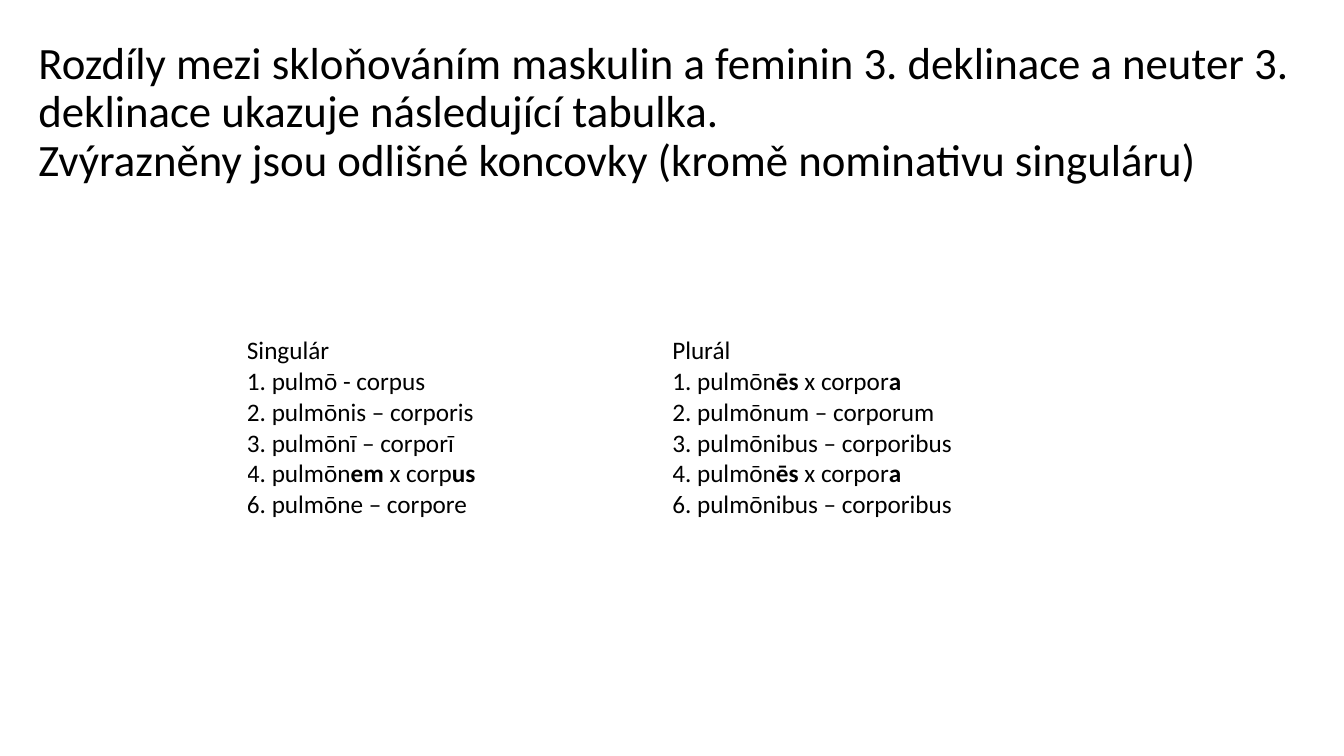
import pptx
import pptx.util
import pptx.dml.color
import pptx.enum.text

Pt = pptx.util.Pt
FONT = "Calibri"
COLORS = {"text": "000000", "background": "FFFFFF"}
TITLE = [
    "Rozdíly mezi skloňováním maskulin a feminin 3. deklinace a neuter 3. "
    "deklinace ukazuje následující tabulka.",
    "Zvýrazněny jsou odlišné koncovky (kromě nominativu singuláru)",
]
DECLENSION = {
    "Singulár": [
        ["1. pulmō - corpus"],
        ["2. pulmōnis – corporis"],
        ["3. pulmōnī – corporī"],
        ["4. pulmōn", "em", " x corp", "us"],
        ["6. pulmōne – corpore"],
    ],
    "Plurál": [
        ["1. pulmōn", "ēs", " x corpor", "a"],
        ["2. pulmōnum – corporum"],
        ["3. pulmōnibus – corporibus"],
        ["4. pulmōn", "ēs", " x corpor", "a"],
        ["6. pulmōnibus – corporibus"],
    ],
}


def color(name):
    return pptx.dml.color.RGBColor.from_string(COLORS[name])


def add_run(p, text, size, bold=False):
    r = p.add_run()
    r.text = text
    r.font.name = FONT
    r.font.size = Pt(size)
    r.font.bold = bold
    r.font.color.rgb = color("text")


def add_title(s, x, y, w, h):
    sp = s.shapes.title
    sp.left, sp.top, sp.width, sp.height = Pt(x), Pt(y), Pt(w), Pt(h)
    tf = sp.text_frame
    tf.word_wrap = True
    tf.auto_size = pptx.enum.text.MSO_AUTO_SIZE.NONE
    tf.vertical_anchor = pptx.enum.text.MSO_ANCHOR.MIDDLE
    p = tf.paragraphs[0]
    p.alignment = pptx.enum.text.PP_ALIGN.LEFT
    p.line_spacing = 0.9
    for i, line in enumerate(TITLE):
        if i:
            p.add_line_break()
        add_run(p, line, 32)


def fill_cell(cell, lines):
    cell.fill.background()
    cell.margin_left = cell.margin_right = cell.margin_top = cell.margin_bottom = 0
    tf = cell.text_frame
    for i, parts in enumerate(lines):
        p = tf.add_paragraph() if i else tf.paragraphs[0]
        for j, part in enumerate(parts):
            add_run(p, part, 18, bold=j % 2 == 1)


def add_declension_table(s, x, y, w, h):
    header_h = h / 7
    table = s.shapes.add_table(2, len(DECLENSION), Pt(x), Pt(y), Pt(w), Pt(h)).table
    table.first_row = table.horz_banding = False
    table.rows[0].height = Pt(header_h)
    table.rows[1].height = Pt(h - header_h)
    for col, (number, forms) in enumerate(DECLENSION.items()):
        table.columns[col].width = Pt(w / len(DECLENSION))
        fill_cell(table.cell(0, col), [[number]])
        fill_cell(table.cell(1, col), forms)


def main():
    prs = pptx.Presentation()
    prs.slide_width, prs.slide_height = Pt(960), Pt(540)
    s = prs.slides.add_slide(prs.slide_layouts[5])
    s.background.fill.solid()
    s.background.fill.fore_color.rgb = color("background")
    add_title(s, 20.2, 28.8, 939.6, 104.4)
    add_declension_table(s, 176.4, 239.8, 607.6, 151.2)
    prs.save("out.pptx")


if __name__ == "__main__":
    main()
